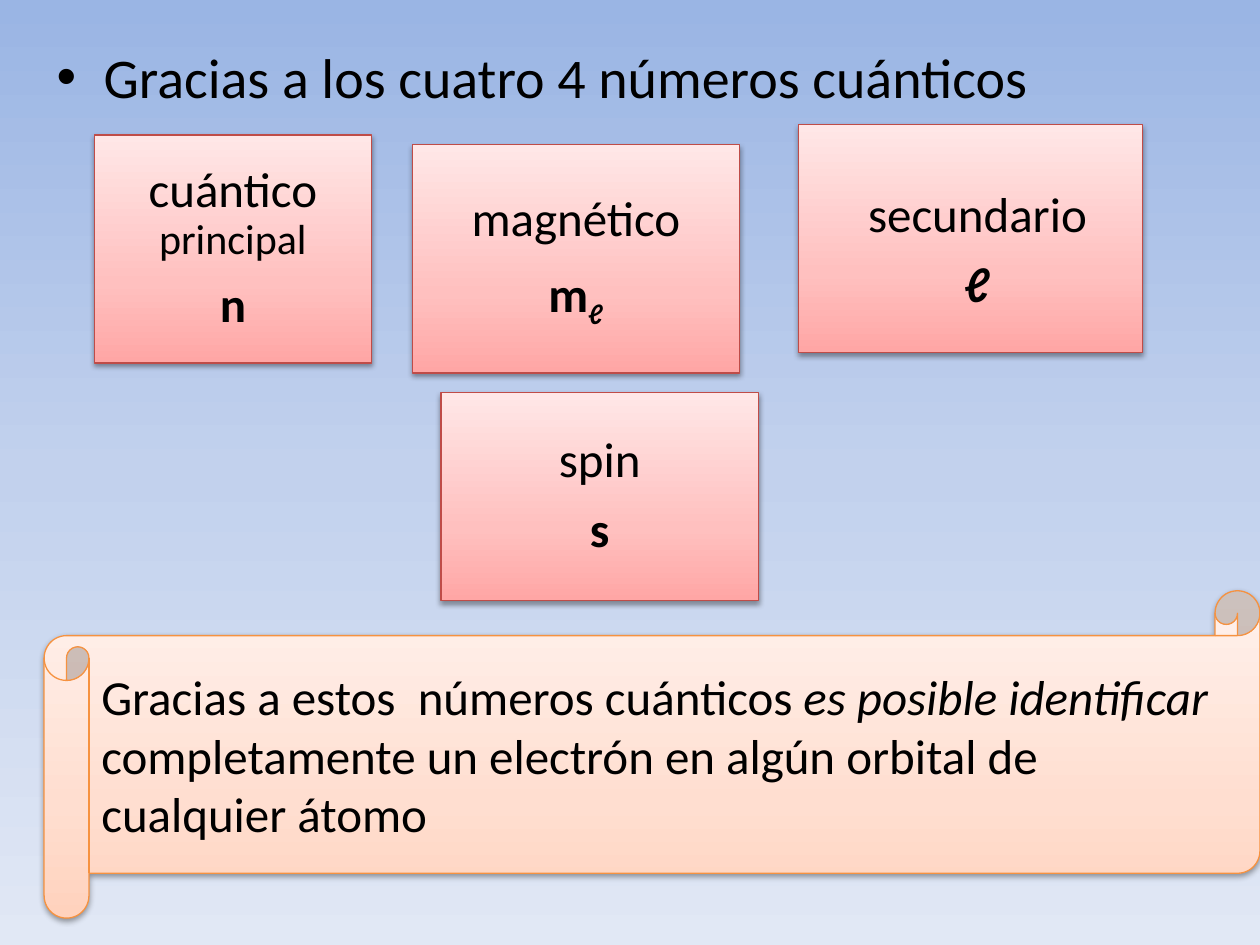
from lxml import etree
from pptx import Presentation
from pptx import util as u
from pptx.dml import color
from pptx.enum import shapes, text
from pptx.oxml import ns

BLACK = "000000"
SKY = [(0, "9AB5E4"), (50, "C2D1ED"), (100, "E1E8F5")]
ROSE = [(0, "FFA6A5"), (35, "FFC0BF"), (100, "FFE7E7")]
PEACH = [(0, "FFD2BD"), (35, "FFDED0"), (100, "FFF2ED")]


def rgb(value):
    return color.RGBColor.from_string(value)


def apply(target, values):
    for name, value in values.items():
        setattr(target, name, value)


def add_xml(parent, tag, **attributes):
    return etree.SubElement(parent, ns.qn(tag), {k: str(v) for k, v in attributes.items()})


class Sheet:
    font = {"name": "Calibri", "size": u.Pt(28), "bold": False, "italic": False}
    frame = {"word_wrap": True, "vertical_anchor": text.MSO_ANCHOR.MIDDLE}

    def __init__(self, page):
        self.page = page

    def gradient(self, fill, owner, stops, angle):
        """Fill with any number of (percent, colour) stops."""
        fill.gradient()
        grad = next(owner.iter(ns.qn("a:gradFill")))
        for child in list(grad):
            grad.remove(child)
        stop_list = add_xml(grad, "a:gsLst")
        for percent, value in stops:
            stop = add_xml(stop_list, "a:gs", pos=percent * 1000)
            add_xml(stop, "a:srgbClr", val=value)
        add_xml(grad, "a:lin", ang=angle * 60000, scaled=0)

    def background(self, stops):
        self.gradient(self.page.background.fill, self.page.element, stops, 90)

    def add_text(self, frame, paragraphs, **layout):
        """Each paragraph is a list of (words, font values) spans."""
        for index, spans in enumerate(paragraphs):
            para = frame.paragraphs[0] if index == 0 else frame.add_paragraph()
            apply(para, layout)
            for words, values in spans:
                span = para.add_run()
                span.text = words
                values = dict(values)
                baseline = values.pop("baseline", None)
                apply(span.font, {**self.font, **values})
                span.font.color.rgb = rgb(BLACK)
                if baseline:
                    span._r.get_or_add_rPr().set("baseline", str(baseline))

    def bullet(self, area, words, size):
        box = self.page.shapes.add_textbox(*map(u.Cm, area))
        box.text_frame.word_wrap = True
        props = box.text_frame.paragraphs[0]._p.get_or_add_pPr()
        indent = u.Cm(0.95)
        props.set("marL", str(indent))
        props.set("indent", str(-indent))
        add_xml(props, "a:buFont", typeface="Arial")
        add_xml(props, "a:buChar", char="•")
        self.add_text(box.text_frame, [[(words, {"size": u.Pt(size)})]])

    def panel(self, kind, area, stops, edge):
        """Preset shape with gradient, thin outline and soft shadow."""
        shape = self.page.shapes.add_shape(kind, *map(u.Cm, area))
        self.gradient(shape.fill, shape.element, stops, 270)
        shape.line.color.rgb = rgb(edge)
        shape.line.width = u.Pt(0.75)
        shape.shadow.inherit = False
        effects = shape.element.spPr.find(ns.qn("a:effectLst"))
        shadow = add_xml(effects, "a:outerShdw", blurRad=u.Pt(3.1), dist=u.Pt(1.6),
                         dir=90 * 60000, rotWithShape=0)
        shade = add_xml(shadow, "a:srgbClr", val=BLACK)
        add_xml(shade, "a:alpha", val=38000)
        apply(shape.text_frame, self.frame)
        return shape

    def card(self, area, name, symbol, shift=(0, 0)):
        """Number name above its symbol; shift adds left and top margin."""
        shape = self.panel(shapes.MSO_SHAPE.RECTANGLE, area, ROSE, "BF4C48")
        margin = 0.03
        apply(shape.text_frame, {
            "margin_left": u.Cm(margin + shift[0]), "margin_top": u.Cm(margin + shift[1]),
            "margin_right": u.Cm(margin), "margin_bottom": u.Cm(margin)})
        self.add_text(shape.text_frame, [name, symbol], alignment=text.PP_ALIGN.CENTER,
                      line_spacing=0.9, space_after=u.Pt(9.8))

    def scroll(self, area, paragraphs):
        shape = self.panel(shapes.MSO_SHAPE.HORIZONTAL_SCROLL, area, PEACH, "F69240")
        shape.adjustments[0] = 0.137
        self.add_text(shape.text_frame, paragraphs, alignment=text.PP_ALIGN.LEFT)


def main():
    deck = Presentation()
    deck.slide_width, deck.slide_height = u.Cm(25.4), u.Cm(19.05)
    sheet = Sheet(deck.slides.add_slide(deck.slide_layouts[6]))
    sheet.background(SKY)
    bold = {"bold": True}

    # Heading
    sheet.bullet((0.89, 0.74, 22.81, 7.19), "Gracias a los cuatro 4 números cuánticos", 32)

    # The four quantum numbers
    sheet.card((1.9, 2.72, 5.59, 4.6),
               [("cuántico ", {}), ("principal", {"size": u.Pt(24)})], [("n", bold)])
    sheet.card((16.1, 2.51, 6.93, 4.6), [("secundario", {})], [("ℓ", bold)], shift=(0.28, 0.53))
    sheet.card((8.31, 2.92, 6.6, 4.6), [("magnético", {})],
               [("m", bold), ("ℓ", {**bold, "baseline": -25000})])
    sheet.card((8.89, 7.92, 6.4, 4.19), [("spin", {})], [("s", bold)])

    # Conclusion
    sheet.scroll((0.89, 11.91, 24.51, 6.6), [
        [("Gracias a estos  números cuánticos ", {}),
         ("es posible identificar", {"italic": True})],
        [("completamente un electrón en algún orbital de cualquier átomo", {})]])

    deck.save("out.pptx")


if __name__ == "__main__":
    main()
